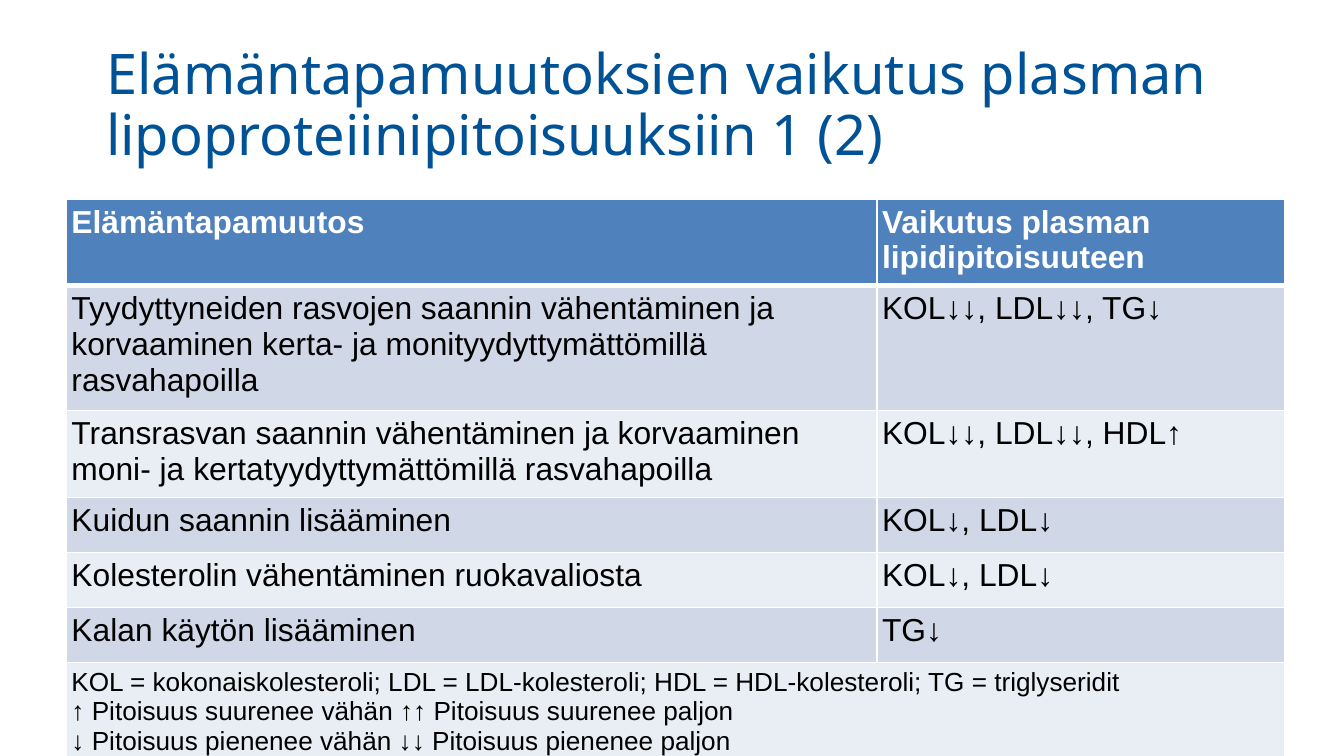
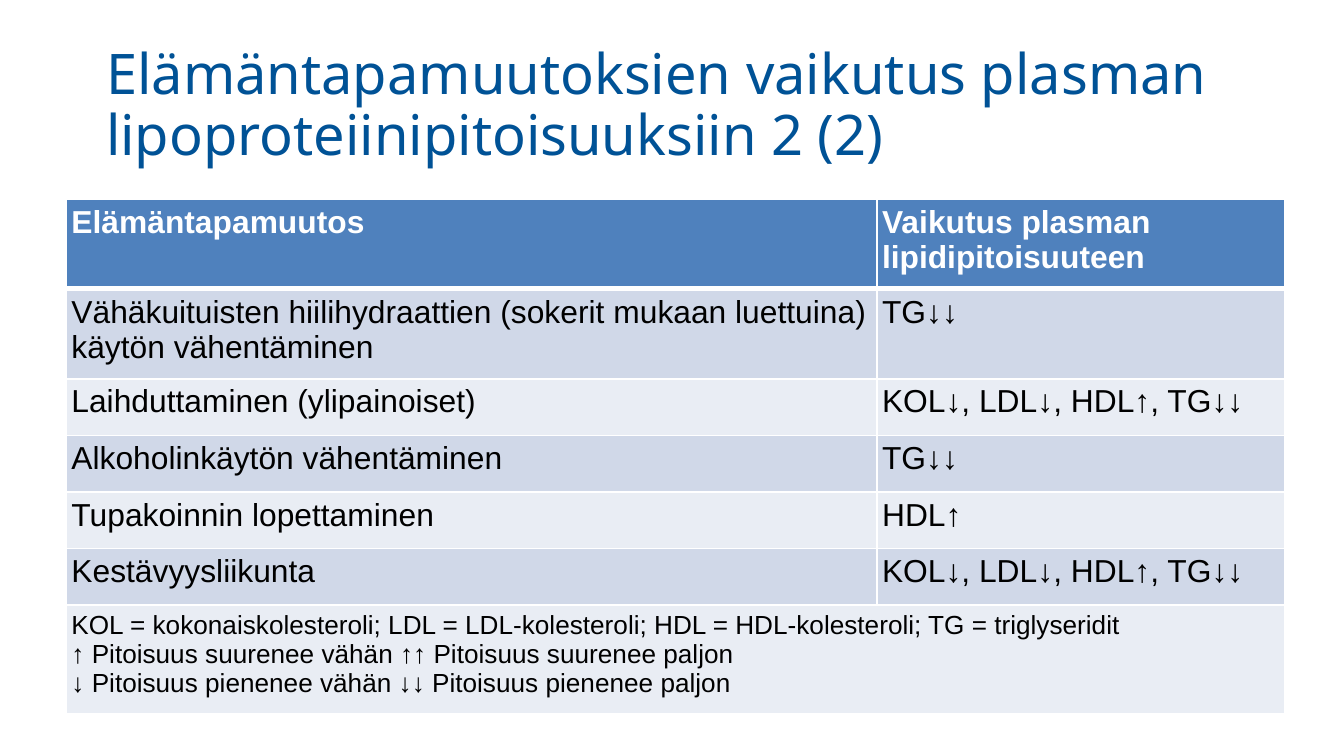
from lxml import etree
from pptx import Presentation
from pptx.dml.color import RGBColor
from pptx.enum import text
from pptx.oxml import ns
from pptx.util import Cm, Pt

TITLE_BLUE = RGBColor(0x00, 0x52, 0x96)
HEADER_BLUE = RGBColor(0x4F, 0x81, 0xBD)
BANDS = (RGBColor(0xE9, 0xED, 0xF4), RGBColor(0xD0, 0xD8, 0xE8))
WHITE = RGBColor(0xFF, 0xFF, 0xFF)
BLACK = RGBColor(0x00, 0x00, 0x00)

TITLE = "Elämäntapamuutoksien vaikutus plasman lipoproteiinipitoisuuksiin {} (2)"
HEADINGS = ("Elämäntapamuutos", "Vaikutus plasman lipidipitoisuuteen")
LEGEND = "\n".join((
    "KOL = kokonaiskolesteroli; LDL = LDL-kolesteroli; HDL = HDL-kolesteroli; TG = triglyseridit",
    "↑ Pitoisuus suurenee vähän ↑↑ Pitoisuus suurenee paljon",
    "↓ Pitoisuus pienenee vähän ↓↓ Pitoisuus pienenee paljon",
))
PARTS = [
    {
        "changes": [
            ("Tyydyttyneiden rasvojen saannin vähentäminen ja korvaaminen kerta- ja "
             "monityydyttymättömillä rasvahapoilla", "KOL↓↓, LDL↓↓, TG↓"),
            ("Transrasvan saannin vähentäminen ja korvaaminen moni- ja "
             "kertatyydyttymättömillä rasvahapoilla", "KOL↓↓, LDL↓↓, HDL↑"),
            ("Kuidun saannin lisääminen", "KOL↓, LDL↓"),
            ("Kolesterolin vähentäminen ruokavaliosta", "KOL↓, LDL↓"),
            ("Kalan käytön lisääminen", "TG↓"),
        ],
        "heights": [1.04] * 7,
    },
    {
        "changes": [
            ("Vähäkuituisten hiilihydraattien (sokerit mukaan luettuina) käytön vähentäminen",
             "TG↓↓"),
            ("Laihduttaminen (ylipainoiset)", "KOL↓, LDL↓, HDL↑, TG↓↓"),
            ("Alkoholinkäytön vähentäminen", "TG↓↓"),
            ("Tupakoinnin lopettaminen", "HDL↑"),
            ("Kestävyysliikunta", "KOL↓, LDL↓, HDL↑, TG↓↓"),
        ],
        "heights": [1.7] * 2 + [1.07] * 4 + [2.06],
    },
]
COLUMNS = (15.32, 7.72)


def set_font(paragraph, name, size, colour, bold=False):
    for run in paragraph.runs:
        run.font.name = name
        run.font.size = Pt(size)
        run.font.bold = bold
        run.font.color.rgb = colour


def set_borders(cell, top, bottom):
    properties = cell._tc.get_or_add_tcPr()
    widths = {"lnL": 1, "lnR": 1, "lnT": top, "lnB": bottom}
    for position, (side, width) in enumerate(widths.items()):
        line = etree.Element(ns.qn(f"a:{side}"), w=str(Pt(width)))
        fill = etree.SubElement(line, ns.qn("a:solidFill"))
        etree.SubElement(fill, ns.qn("a:srgbClr"), val=str(WHITE))
        properties.insert(position, line)


def add_title(slide, number):
    title = slide.shapes.title
    title.left, title.top, title.width, title.height = Cm(1.75), Cm(0.61), Cm(21.89), Cm(2.82)
    frame = title.text_frame
    frame.text = TITLE.format(number)
    frame.word_wrap = True
    frame.auto_size = text.MSO_AUTO_SIZE.SHAPE_TO_FIT_TEXT
    frame.vertical_anchor = text.MSO_ANCHOR.MIDDLE
    heading = frame.paragraphs[0]
    heading.alignment = text.PP_ALIGN.LEFT
    heading.line_spacing = 0.9
    set_font(heading, "Noto Sans", 30, TITLE_BLUE)


def add_effects(slide, changes, heights):
    rows = [HEADINGS, *changes, (LEGEND, "")]
    effects = slide.shapes.add_table(
        len(rows), len(COLUMNS), Cm(1.25), Cm(3.76), Cm(sum(COLUMNS)), Cm(sum(heights))
    ).table
    for column, width in zip(effects.columns, COLUMNS):
        column.width = Cm(width)
    for row, height in zip(effects.rows, heights):
        row.height = Cm(height)
    last = len(rows) - 1
    effects.cell(last, 0).merge(effects.cell(last, 1))
    for r, wording in enumerate(rows):
        header = r == 0
        for c, words in enumerate(wording):
            cell = effects.cell(r, c)
            cell.margin_left = cell.margin_right = Cm(0.1)
            cell.margin_top = cell.margin_bottom = Cm(0.1)
            cell.fill.solid()
            cell.fill.fore_color.rgb = HEADER_BLUE if header else BANDS[r % 2]
            set_borders(cell, 3 if r == 1 else 1, 3 if header else 1)
            if words:
                paragraph = cell.text_frame.paragraphs[0]
                paragraph.text = words
                set_font(paragraph, "Arial", 14 if r == last else 17,
                         WHITE if header else BLACK, header)


def main():
    deck = Presentation()
    deck.slide_width, deck.slide_height = Cm(25.4), Cm(14.29)
    for number, part in enumerate(PARTS, 1):
        slide = deck.slides.add_slide(deck.slide_layouts[5])
        add_title(slide, number)
        add_effects(slide, **part)
    deck.save("out.pptx")


if __name__ == "__main__":
    main()
